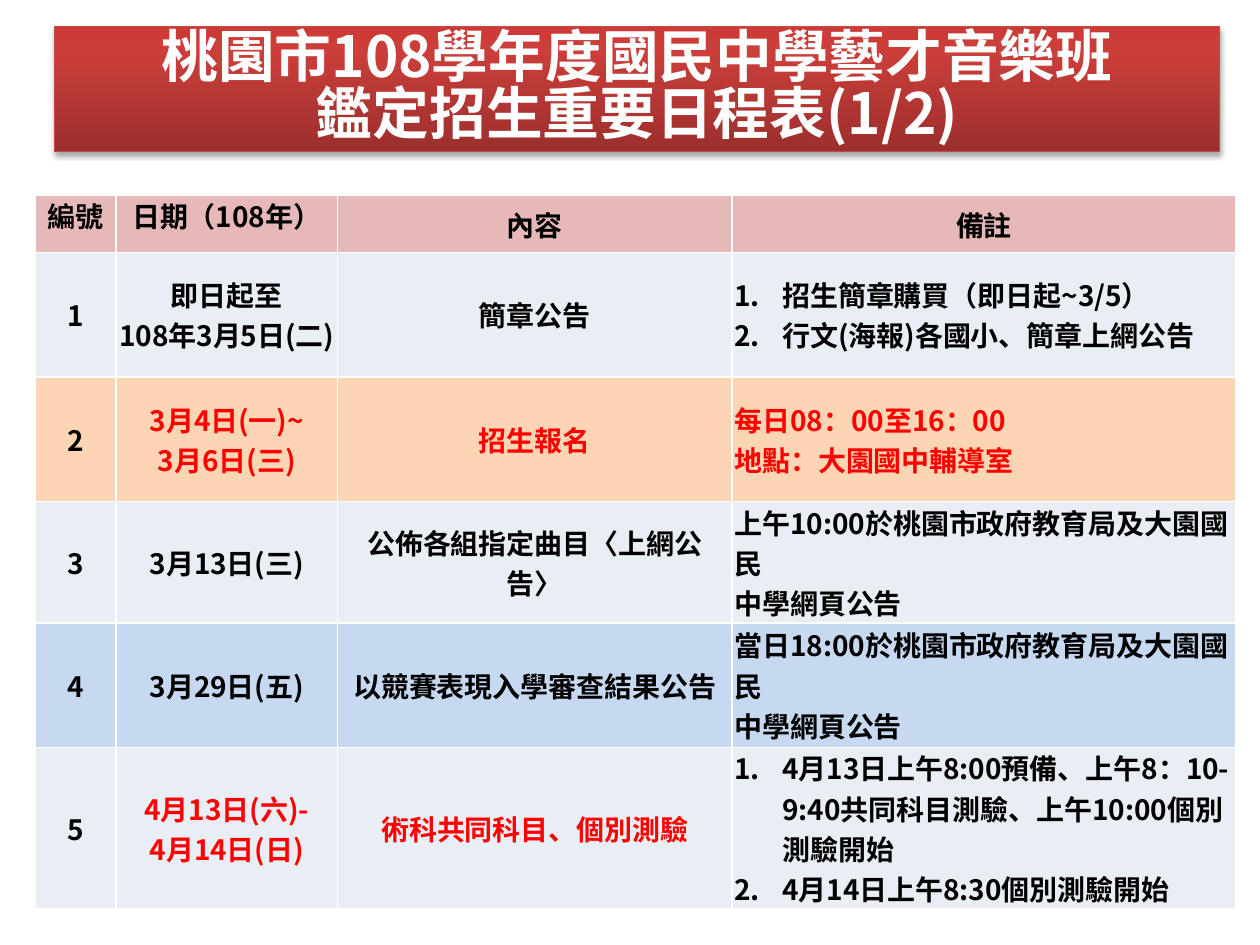
"""Build the schedule slide for the music class admission, page 1 of 2."""
from copy import deepcopy

from lxml import etree
from pptx import Presentation
from pptx.dml.color import RGBColor
from pptx.enum.shapes import MSO_SHAPE
from pptx.enum.text import MSO_ANCHOR, PP_ALIGN
from pptx.oxml.ns import qn
from pptx.util import Inches, Pt

RECT = MSO_SHAPE.RECTANGLE
TOP, MIDDLE = MSO_ANCHOR.TOP, MSO_ANCHOR.MIDDLE
LEFT, CENTER = PP_ALIGN.LEFT, PP_ALIGN.CENTER

THEME = {
    "font": "Noto Sans CJK SC", "title_size": 32.4, "body_size": 16,
    "text": "000000", "alert": "FF0000", "white": "FFFFFF",
    "header": "E6B9B8", "plain": "E9EDF4", "orange": "FCD5B5", "blue": "C6D9F1",
    "line": "BF4C48", "shadow": "000000",
    "gradient": [(0, "9C2F2D"), (0.8, "CB3E3A"), (1, "CE3B37")],
}
COLS = [0.064, 0.176, 0.313, 0.4]
ROWS = [0.06, 0.132, 0.132, 0.11, 0.132, 0.148]
HEADER = ["編號", "日期（108年）", "內容", "備註"]
EVENTS = [
    ("plain", (), ["即日起至", "108年3月5日(二)"], ["簡章公告"], True,
     ["招生簡章購買（即日起~3/5）", "行文(海報)各國小、簡章上網公告"]),
    ("orange", (1, 2, 3), ["3月4日(一)~", "3月6日(三)"], ["招生報名"], False,
     ["每日08：00至16：00", "地點：大園國中輔導室"]),
    ("plain", (), ["3月13日(三)"], ["公佈各組指定曲目〈上網公告〉"], False,
     ["上午10:00於桃園市政府教育局及大園國民", "中學網頁公告"]),
    ("blue", (), ["3月29日(五)"], ["以競賽表現入學審查結果公告"], False,
     ["當日18:00於桃園市政府教育局及大園國民", "中學網頁公告"]),
    ("plain", (1, 2), ["4月13日(六)-", "4月14日(日)"], ["術科共同科目、個別測驗"], True,
     ["4月13日上午8:00預備、上午8：10-9:40共同科目測驗、上午10:00個別測驗開始",
      "4月14日上午8:30個別測驗開始"]),
]


def add_xml(parent, tag, **attrs):
    return etree.SubElement(parent, qn(tag), {k: str(v) for k, v in attrs.items()})


def write(tf, paragraphs, size=THEME["body_size"], color="text", align=CENTER,
          numbered=False, spacing=None):
    for i, text in enumerate(paragraphs):
        p = tf.add_paragraph() if i else tf.paragraphs[0]
        p.text = text
        p.alignment = align
        if spacing:
            p.line_spacing = spacing
        if numbered:
            pPr = p._p.get_or_add_pPr()
            pPr.set("marL", str(Inches(0.38)))
            pPr.set("indent", str(-Inches(0.38)))
            add_xml(pPr, "a:buFont", typeface="+mj-lt")
            add_xml(pPr, "a:buAutoNum", type="arabicPeriod")
        for r in p.runs:
            r.font.size, r.font.bold, r.font.name = Pt(size), True, THEME["font"]
            r.font.color.rgb = RGBColor.from_string(THEME[color])
            add_xml(r._r.get_or_add_rPr(), "a:ea", typeface=THEME["font"])


prs = Presentation()
prs.slide_width, prs.slide_height = Inches(10), Inches(7.5)
W, H = prs.slide_width, prs.slide_height
s = prs.slides.add_slide(prs.slide_layouts[6])

frame = s.shapes.add_table(len(ROWS), len(COLS), int(0.028 * W), int(0.207 * H),
                           int(sum(COLS) * W), int(sum(ROWS) * H))
table = frame.table
table.first_row = table.horz_banding = False
for col, share in zip(table.columns, COLS):
    col.width = int(share * W)
for row, share in zip(table.rows, ROWS):
    row.height = int(share * H)

for c, text in enumerate(HEADER):
    write(table.cell(0, c).text_frame, [text])
fills = ["header"]
for n, (fill, alerts, date, content, numbered, notes) in enumerate(EVENTS, 1):
    fills.append(fill)
    for c, paragraphs in enumerate([[str(n)], date, content, notes]):
        write(table.cell(n, c).text_frame, paragraphs,
              color="alert" if c in alerts else "text",
              align=LEFT if c == 3 else CENTER, numbered=numbered and c == 3)

for n, fill in enumerate(fills):
    for c in range(len(COLS)):
        cell = table.cell(n, c)
        cell.vertical_anchor = TOP if n == 0 and c < 2 else MIDDLE
        cell.margin_left = cell.margin_right = Inches(0.02)
        cell.margin_top = cell.margin_bottom = 0
        for side in ("a:lnL", "a:lnR", "a:lnT", "a:lnB"):
            ln = add_xml(cell._tc.get_or_add_tcPr(), side, w=Pt(1))
            add_xml(add_xml(ln, "a:solidFill"), "a:srgbClr", val=THEME["white"])
        cell.fill.solid()
        cell.fill.fore_color.rgb = RGBColor.from_string(THEME[fill])

sp = s.shapes.add_shape(RECT, int(0.043 * W), int(0.028 * H), int(0.925 * W), int(0.132 * H))
sp.fill.gradient()
sp.fill.gradient_angle = 90
stops = sp._element.spPr.find(".//" + qn("a:gsLst"))
stops.append(deepcopy(stops[-1]))
for stop, (position, color) in zip(sp.fill.gradient_stops, THEME["gradient"]):
    stop.position = position
    stop.color.rgb = RGBColor.from_string(color)
sp.line.color.rgb = RGBColor.from_string(THEME["line"])
sp.line.width = Pt(0.75)
sp.shadow.inherit = False
shadow = add_xml(sp._element.spPr.find(qn("a:effectLst")), "a:outerShdw", blurRad=Pt(3.1),
                 dist=Pt(1.8), dir=90 * 60000, rotWithShape=0)
add_xml(add_xml(shadow, "a:srgbClr", val=THEME["shadow"]), "a:alpha", val=35000)
tf = sp.text_frame
tf.word_wrap = True
tf.vertical_anchor = MIDDLE
write(tf, ["桃園市108學年度國民中學藝才音樂班\n鑑定招生重要日程表(1/2)"],
      size=THEME["title_size"], color="white", spacing=0.83)

prs.save("out.pptx")
